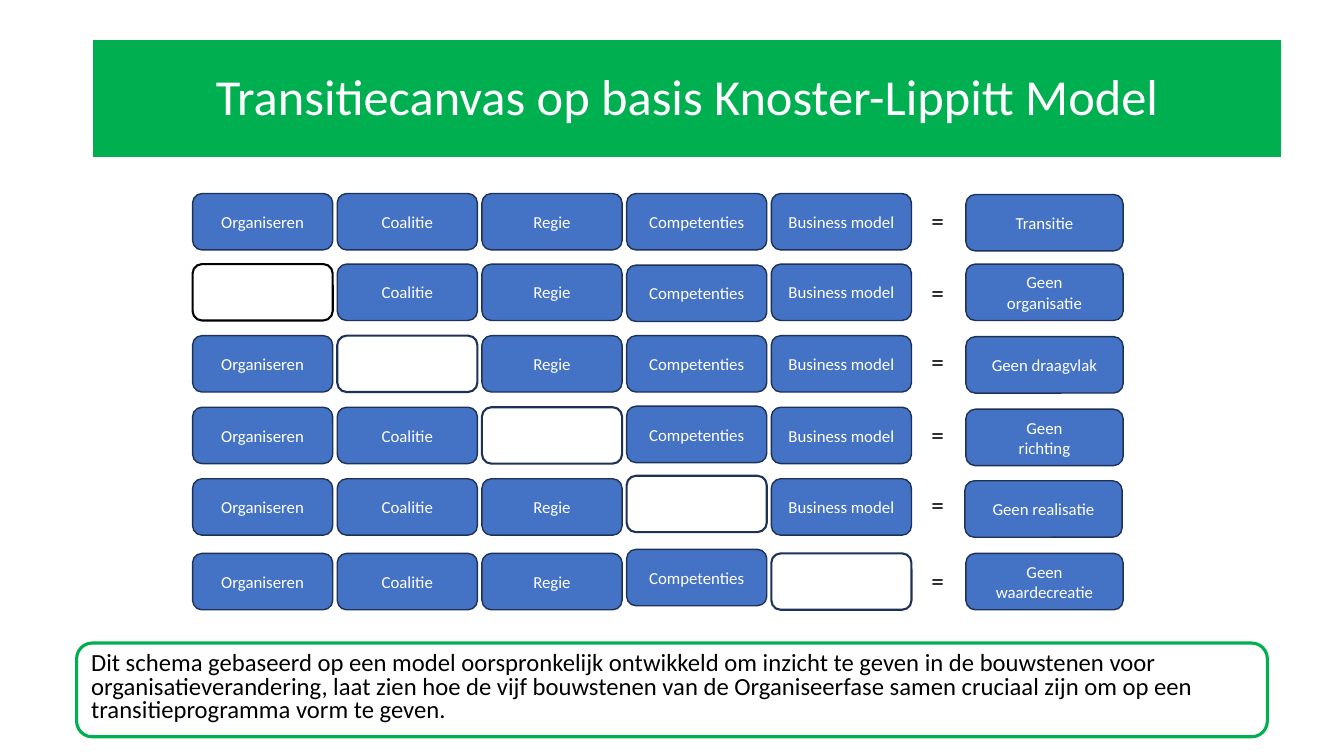
from dataclasses import dataclass

from pptx import Presentation
from pptx.dml.color import RGBColor
from pptx.enum.shapes import MSO_SHAPE
from pptx.enum.text import MSO_ANCHOR, MSO_AUTO_SIZE, PP_ALIGN
from pptx.util import Inches, Pt

ROUNDED = MSO_SHAPE.ROUNDED_RECTANGLE
MIDDLE, TOP = MSO_ANCHOR.MIDDLE, MSO_ANCHOR.TOP
CENTER, LEFT = PP_ALIGN.CENTER, PP_ALIGN.LEFT
NO_AUTOSIZE, FIT_SHAPE = MSO_AUTO_SIZE.NONE, MSO_AUTO_SIZE.SHAPE_TO_FIT_TEXT

WHITE, BLACK = "FFFFFF", "000000"
GREEN, BLUE, NAVY = "00B050", "4472C4", "1E3256"

BLOCKS = ["Organiseren", "Coalitie", "Regie", "Competenties", "Business model"]
SKILLS = "Competenties"
BLOCK_LEFT, BLOCK_PITCH = 1.91, 1.435
BLOCK_WIDTH, BLOCK_HEIGHT = 1.39, 0.56
EQUALS_LEFT, RESULT_WIDTH = 9.14, 1.56

TITLE = "Transitiecanvas op basis Knoster-Lippitt Model"
EXPLANATION = (
    "Dit schema gebaseerd op een model oorspronkelijk ontwikkeld om inzicht te geven "
    "in de bouwstenen voor organisatieverandering, laat zien hoe de vijf bouwstenen "
    "van de Organiseerfase samen cruciaal zijn om op een transitieprogramma vorm te geven."
)


@dataclass
class CanvasRow:
    top: float
    skills_top: float
    equals_top: float
    result_top: float
    result: str
    missing: str = ""
    result_left: float = 9.58
    missing_line: str = NAVY


ROWS = [
    CanvasRow(1.92, 1.92, 1.99, 1.93, "Transitie"),
    CanvasRow(2.62, 2.63, 2.70, 2.62, "Geen\norganisatie", "Organiseren",
              missing_line=BLACK),
    CanvasRow(3.33, 3.33, 3.39, 3.34, "Geen draagvlak", "Coalitie"),
    CanvasRow(4.04, 4.03, 4.11, 4.06, "Geen\nrichting", "Regie"),
    CanvasRow(4.75, 4.72, 4.81, 4.77, "Geen realisatie", SKILLS, result_left=9.57),
    CanvasRow(5.49, 5.45, 5.56, 5.49, "Geen waardecreatie", "Business model"),
]


def color(hex_value: str) -> RGBColor:
    return RGBColor.from_string(hex_value)


def set_attributes(target, values: dict) -> None:
    for name, value in values.items():
        setattr(target, name, value)


def write(shape, text: str, size: float, font_color: str, frame_format: dict,
          paragraph_format: dict) -> None:
    """Fill a shape with text, one paragraph per line."""
    frame = shape.text_frame
    frame.text = text
    set_attributes(frame, frame_format)
    for paragraph in frame.paragraphs:
        set_attributes(paragraph, paragraph_format)
        set_attributes(paragraph.font, {"size": Pt(size), "name": "Calibri"})
        paragraph.font.color.rgb = color(font_color)


def paint(shape, fill: str, line: str, line_width: float) -> None:
    """Set fill and outline; an empty fill leaves the shape open."""
    if fill:
        shape.fill.solid()
        shape.fill.fore_color.rgb = color(fill)
    else:
        shape.fill.background()
    shape.line.color.rgb = color(line)
    shape.line.width = Pt(line_width)


def add_rounded(slide, left: float, top: float, width: float, height: float,
                fill: str, line: str, line_width: float):
    shape = slide.shapes.add_shape(
        ROUNDED, Inches(left), Inches(top), Inches(width), Inches(height))
    shape.shadow.inherit = False
    paint(shape, fill, line, line_width)
    return shape


def add_block(slide, left: float, top: float, width: float, text: str) -> None:
    shape = add_rounded(slide, left, top, width, BLOCK_HEIGHT, BLUE, NAVY, 1)
    write(shape, text, 12, WHITE,
          {"vertical_anchor": MIDDLE, "word_wrap": True}, {"alignment": CENTER})


def add_equals(slide, top: float) -> None:
    box = slide.shapes.add_textbox(
        Inches(EQUALS_LEFT), Inches(top), Inches(0.36), Inches(0.4))
    write(box, "=", 18, BLACK,
          {"word_wrap": True, "auto_size": FIT_SHAPE}, {"alignment": LEFT})


def add_row(slide, row: CanvasRow) -> None:
    for column, block in enumerate(BLOCKS):
        left = BLOCK_LEFT + column * BLOCK_PITCH
        top = row.skills_top if block == SKILLS else row.top
        if block == row.missing:
            add_rounded(slide, left, top, BLOCK_WIDTH, BLOCK_HEIGHT,
                        "", row.missing_line, 1.5)
        else:
            add_block(slide, left, top, BLOCK_WIDTH, block)
    add_equals(slide, row.equals_top)
    add_block(slide, row.result_left, row.result_top, RESULT_WIDTH, row.result)


def add_title(slide) -> None:
    title = slide.shapes.title
    set_attributes(title, {"left": Inches(0.91), "top": Inches(0.39),
                           "width": Inches(11.81), "height": Inches(1.18)})
    paint(title, GREEN, WHITE, 1.5)
    write(title, TITLE, 36, WHITE,
          {"vertical_anchor": MIDDLE, "word_wrap": True, "auto_size": NO_AUTOSIZE},
          {"alignment": CENTER, "line_spacing": 0.9})


def add_explanation(slide) -> None:
    shape = add_rounded(slide, 0.76, 6.38, 11.81, 0.93, "", GREEN, 2.25)
    write(shape, EXPLANATION, 17.6, BLACK,
          {"vertical_anchor": TOP, "word_wrap": True},
          {"alignment": LEFT, "line_spacing": 0.8})


def main() -> None:
    presentation = Presentation()
    presentation.slide_width = Inches(13.33)
    presentation.slide_height = Inches(7.5)
    slide = presentation.slides.add_slide(presentation.slide_layouts[5])
    add_title(slide)
    for row in ROWS:
        add_row(slide, row)
    add_explanation(slide)
    presentation.save("out.pptx")


if __name__ == "__main__":
    main()
